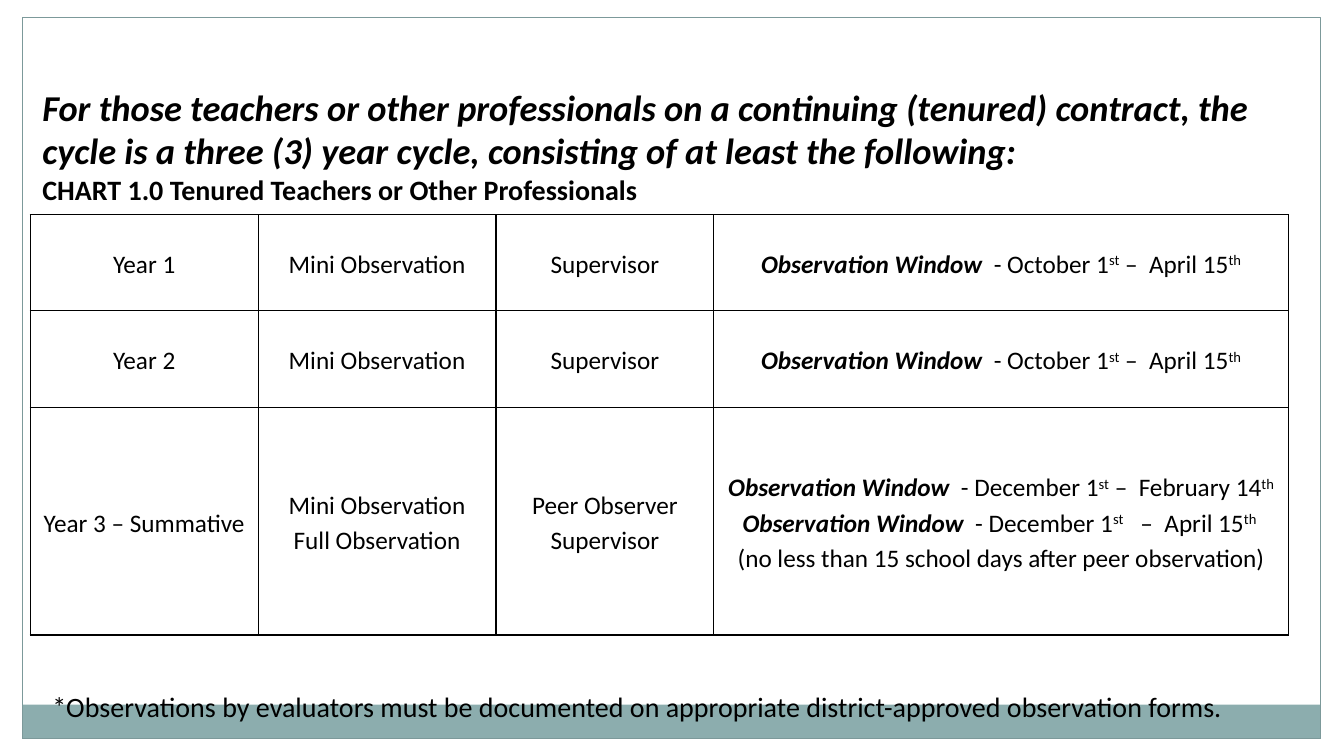
import pptx
import pptx.dml.color
import pptx.enum.shapes
import pptx.enum.text
import pptx.oxml
import pptx.oxml.ns
import pptx.util
from dataclasses import dataclass

Align = pptx.enum.text.PP_ALIGN
Anchor = pptx.enum.text.MSO_ANCHOR
AutoSize = pptx.enum.text.MSO_AUTO_SIZE
RECTANGLE = pptx.enum.shapes.MSO_SHAPE.RECTANGLE
PX = 9144  # EMU per px, 100 px to the inch


@dataclass(frozen=True)
class Theme:
    font: str = "Calibri"
    ink: str = "000000"
    margin: str = "FFFFFF"
    band: str = "8CADAE"
    frame: str = "7C999A"
    heading: int = 26
    caption: int = 20
    cell: int = 18


theme = Theme()


def write(para, text, size, bold=False, italic=False, raised=False):
    span = para.add_run()
    span.text = text
    span.font.name = theme.font
    span.font.size = pptx.util.Pt(size)
    span.font.bold = bold
    span.font.italic = italic
    span.font.color.rgb = pptx.dml.color.RGBColor.from_string(theme.ink)
    if raised:
        span.font._element.set("baseline", "30000")


def observation_window(start, dash, end, tail="th"):
    """Return the spans of one line that gives an observation window."""
    return [
        ("Observation Window ", {"bold": True, "italic": True}),
        (f" - {start}", {}),
        ("st", {"raised": True}),
        (f"{dash}{end}", {}),
        (tail, {"raised": True}),
    ]


deck = pptx.Presentation()
deck.slide_width, deck.slide_height = 1333 * PX, 750 * PX
page = deck.slides.add_slide(deck.slide_layouts[5])

# Page margins, bottom band and frame: left, top, width, height, fill, line
for left, top, width, height, fill, line in (
    (0, 0, 1333, 17, theme.margin, None),
    (1311, 0, 22, 750, theme.margin, None),
    (0, 0, 22, 750, theme.margin, None),
    (22, 699, 1288, 34, theme.band, None),
    (22, 17, 1288, 716, None, theme.frame),
):
    box = page.shapes.add_shape(RECTANGLE, left * PX, top * PX, width * PX, height * PX)
    box.shadow.inherit = False
    for paint, color in ((box.fill, fill), (box.line.fill, line)):
        if color:
            paint.solid()
            paint.fore_color.rgb = pptx.dml.color.RGBColor.from_string(color)
        else:
            paint.background()
    if line:
        box.line.width = pptx.util.Pt(0.75)

# Observation cycle: each cell is a list of lines, each line a list of spans
autumn = observation_window("October 1", " –  ", "April 15")
rows = [
    [[[(year, {})]], [[("Mini Observation", {})]], [[("Supervisor", {})]], [autumn]]
    for year in ("Year 1", "Year 2")
]
rows.append([
    [[("Year 3 – Summative", {})]],
    [[("Mini Observation", {})], [("Full Observation", {})]],
    [[("Peer Observer", {})], [("Supervisor", {})]],
    [
        observation_window("December 1", " –  ", "February 14"),
        observation_window("December 1", "   –  ", "April 15", "th "),
        [("(no less than 15 school days after peer observation)", {})],
    ],
])
widths = [226, 236, 216, 570]
heights = [95, 96, 226]

table = page.shapes.add_table(
    len(rows), len(widths), 30 * PX, 213 * PX, sum(widths) * PX, sum(heights) * PX
).table
table.first_row = table.horz_banding = False
for column, width in zip(table.columns, widths):
    column.width = width * PX
for row, height in zip(table.rows, heights):
    row.height = height * PX

for row, contents in zip(table.rows, rows):
    for cell, lines in zip(row.cells, contents):
        cell.fill.background()
        cell.vertical_anchor = Anchor.MIDDLE
        cell.margin_left = cell.margin_right = 7 * PX
        cell.margin_top = cell.margin_bottom = 0
        for position, side in enumerate(("lnL", "lnR", "lnT", "lnB")):
            border = pptx.oxml.parse_xml(
                f'<a:{side} {pptx.oxml.ns.nsdecls("a")} w="12700"><a:solidFill>'
                f'<a:srgbClr val="{theme.ink}"/></a:solidFill></a:{side}>'
            )
            cell._tc.get_or_add_tcPr().insert(position, border)
        for number, spans in enumerate(lines):
            para = cell.text_frame.add_paragraph() if number else cell.text_frame.paragraphs[0]
            para.alignment = Align.CENTER
            para.line_spacing = 1.15
            if len(lines) == 3 and number == 0:
                para.space_before = pptx.util.Pt(3)
            for text, style in spans:
                write(para, text, theme.cell, **style)

# Footnote
note = page.shapes.add_textbox(42 * PX, 679 * PX, 1238 * PX, 44 * PX).text_frame
note.word_wrap = True
note.auto_size = AutoSize.SHAPE_TO_FIT_TEXT
note.vertical_anchor = Anchor.MIDDLE
write(
    note.paragraphs[0],
    "*Observations by evaluators must be documented on appropriate "
    "district-approved observation forms.",
    theme.caption,
)

# Heading and table caption
title = page.shapes.title
title.left, title.top, title.width, title.height = 32 * PX, 79 * PX, 1252 * PX, 131 * PX
heading = title.text_frame
heading.word_wrap = True
heading.auto_size = AutoSize.SHAPE_TO_FIT_TEXT
heading.vertical_anchor = Anchor.TOP
write(
    heading.paragraphs[0],
    "For those teachers or other professionals on a continuing (tenured) contract, "
    "the cycle is a three (3) year cycle, consisting of at least the following:",
    theme.heading, bold=True, italic=True,
)
write(
    heading.add_paragraph(),
    "CHART 1.0 Tenured Teachers or Other Professionals",
    theme.caption, bold=True,
)
for para in heading.paragraphs:
    para.alignment = Align.LEFT

deck.save("out.pptx")
